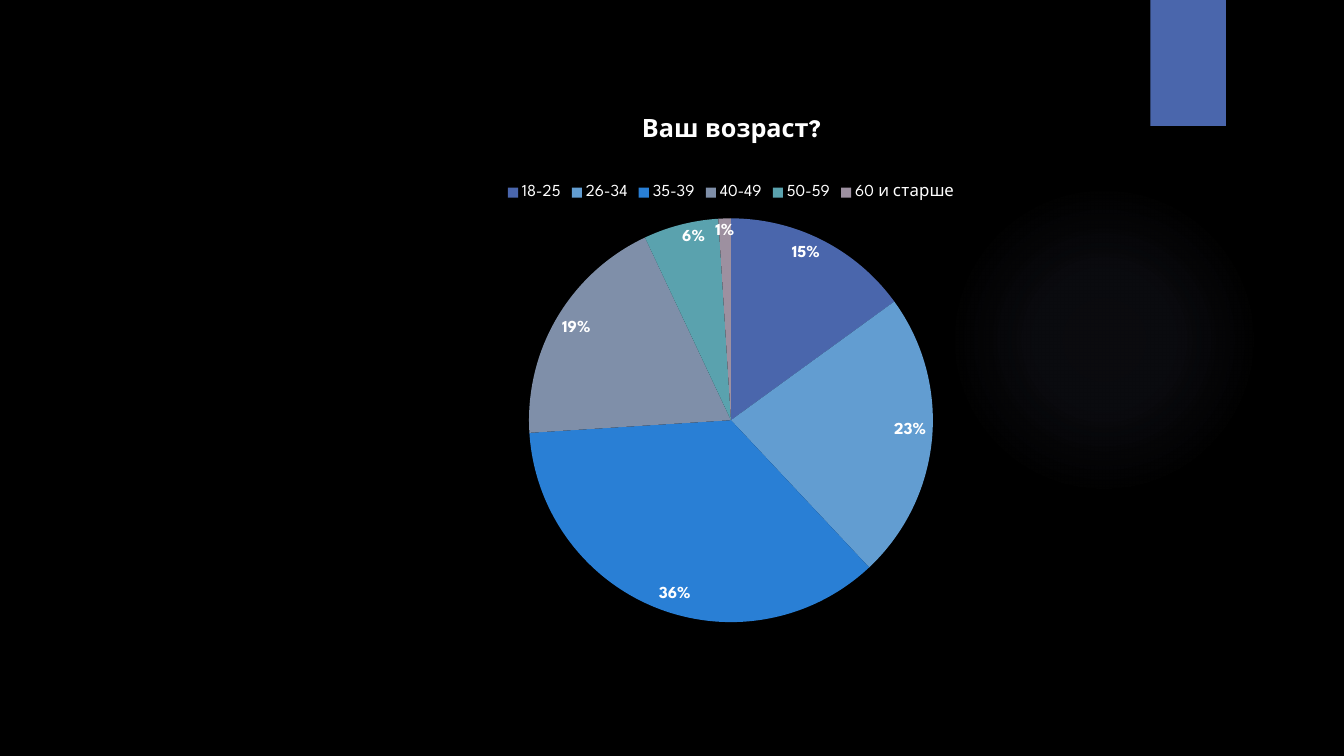
from dataclasses import dataclass

from lxml import etree
from pptx import Presentation
from pptx.chart.data import CategoryChartData
from pptx.dml.color import RGBColor
from pptx.enum.chart import XL_CHART_TYPE, XL_LABEL_POSITION, XL_LEGEND_POSITION
from pptx.enum.shapes import MSO_SHAPE
from pptx.enum.text import MSO_ANCHOR, PP_ALIGN
from pptx.oxml.ns import qn
from pptx.util import Inches, Pt


@dataclass(frozen=True)
class Theme:
    """Colours, font and type sizes of the slide."""
    background: str = "000000"
    text: str = "FFFFFF"
    accent: str = "4A66AC"
    glow: str = "9297CF"
    slices: tuple = ("4A66AC", "629DD1", "297FD5", "7F8FA9", "5AA2AE", "9D90A0")
    font: str = "League Spartan"
    title_size: int = 18
    label_size: int = 12
    chart_size: int = 10


THEME = Theme()
GLOW_STOPS = ((0, 7), (36, 6), (69, 0))
AGES = {"18-25": 15, "26-34": 23, "35-39": 36, "40-49": 19, "50-59": 6, "60 и старше": 1}


def style_font(font, size, bold=False):
    """Apply the theme face and text colour to a font."""
    font.name = THEME.font
    font.size = Pt(size)
    font.bold = bold
    font.color.rgb = RGBColor.from_string(THEME.text)


def add_plain_shape(slide, kind, box):
    """Add a preset shape without line or shadow."""
    sp = slide.shapes.add_shape(kind, *map(Inches, box))
    sp.shadow.inherit = False
    sp.line.fill.background()
    return sp


def add_glow(slide, box):
    """Add a faint circle that fades out from its centre."""
    sp = add_plain_shape(slide, MSO_SHAPE.OVAL, box)
    sp.fill.gradient()
    grad = sp._element.spPr.find(qn("a:gradFill"))
    for child in list(grad):
        grad.remove(child)
    stops = etree.SubElement(grad, qn("a:gsLst"))
    for position, alpha in GLOW_STOPS:
        stop = etree.SubElement(stops, qn("a:gs"), pos=str(position * 1000))
        color = etree.SubElement(stop, qn("a:srgbClr"), val=THEME.glow)
        etree.SubElement(color, qn("a:alpha"), val=str(alpha * 1000))
    radial = etree.SubElement(grad, qn("a:path"), path="circle")
    etree.SubElement(radial, qn("a:fillToRect"), dict.fromkeys("ltrb", "50000"))


def add_tab(slide, box):
    """Add the accent tab hanging from the top edge."""
    sp = add_plain_shape(slide, MSO_SHAPE.RECTANGLE, box)
    sp.fill.solid()
    sp.fill.fore_color.rgb = RGBColor.from_string(THEME.accent)


def set_title(slide, text, box):
    """Place and format the title placeholder."""
    title = slide.shapes.title
    title.left, title.top, title.width, title.height = map(Inches, box)
    tf = title.text_frame
    tf.text = text
    tf.vertical_anchor = MSO_ANCHOR.TOP
    p = tf.paragraphs[0]
    p.alignment = PP_ALIGN.CENTER
    style_font(p.runs[0].font, THEME.title_size, bold=True)


def add_age_pie(slide, ages, box):
    """Add the pie of age groups with its legend on top."""
    data = CategoryChartData()
    data.categories = list(ages)
    data.add_series("Series 1", list(ages.values()))
    chart = slide.shapes.add_chart(XL_CHART_TYPE.PIE, *map(Inches, box), data).chart
    chart.has_title = False
    style_font(chart.font, THEME.chart_size)

    chart.has_legend = True
    chart.legend.position = XL_LEGEND_POSITION.TOP
    chart.legend.include_in_layout = False
    style_font(chart.legend.font, THEME.label_size)

    plot = chart.plots[0]
    plot.vary_by_categories = True
    for i, color in enumerate(THEME.slices):
        fill = plot.series[0].points[i].format.fill
        fill.solid()
        fill.fore_color.rgb = RGBColor.from_string(color)

    plot.has_data_labels = True
    labels = plot.data_labels
    labels.show_value = False
    labels.show_percentage = True
    labels.number_format = "0%"
    labels.number_format_is_linked = False
    labels.position = XL_LABEL_POSITION.INSIDE_END
    style_font(labels.font, THEME.label_size, bold=True)


def build_chart_slide(prs):
    """Build the age survey slide."""
    slide = prs.slides.add_slide(prs.slide_layouts[5])
    fill = slide.background.fill
    fill.solid()
    fill.fore_color.rgb = RGBColor.from_string(THEME.background)
    add_glow(slide, (9.41, 1.83, 3.08, 3.08))
    add_tab(slide, (11.41, 0, 0.75, 1.25))
    set_title(slide, "Ваш возраст?", (2.11, 1.06, 10.29, 1.53))
    add_age_pie(slide, AGES, (2.36, 1.72, 9.78, 4.59))


def main():
    """Create the presentation and save it."""
    prs = Presentation()
    prs.slide_width, prs.slide_height = Inches(13.33), Inches(7.5)
    build_chart_slide(prs)
    prs.save("out.pptx")


if __name__ == "__main__":
    main()
